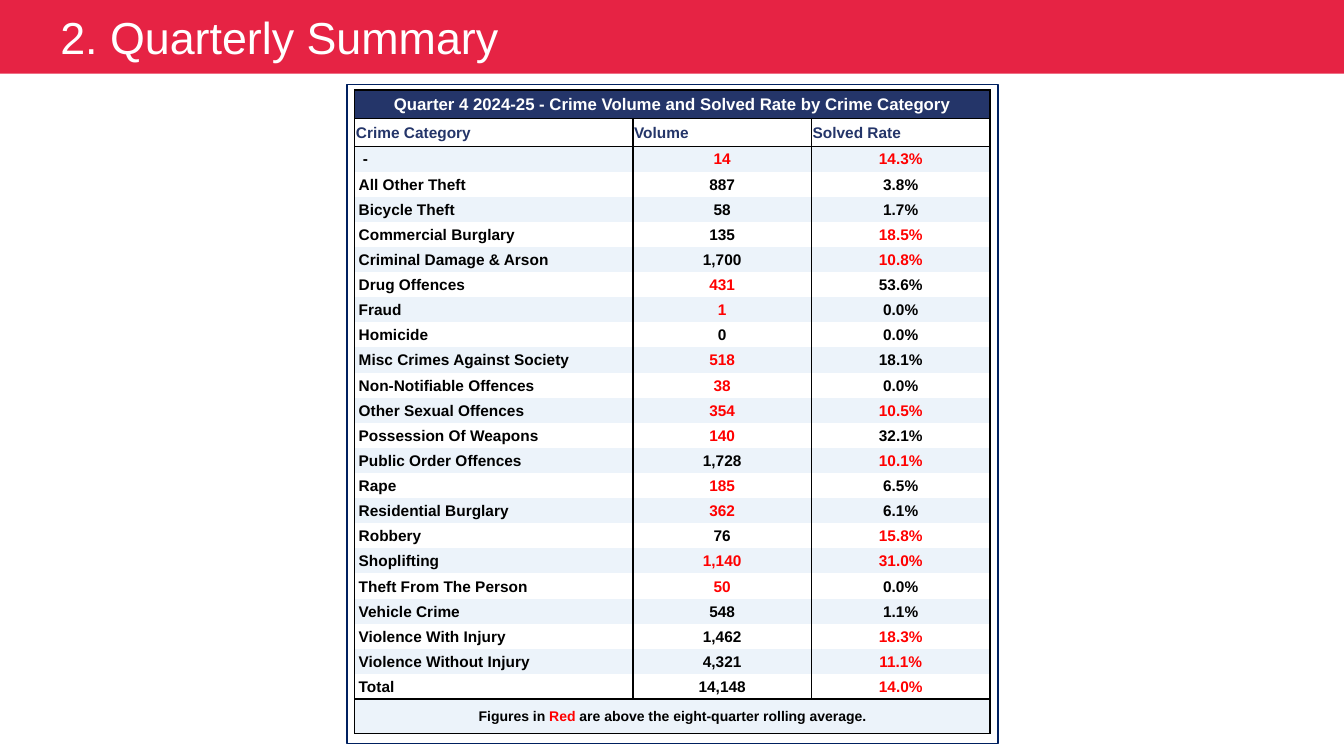
"""Build the quarterly crime summary slide."""
from lxml.etree import SubElement
from pptx import Presentation
from pptx.dml.color import RGBColor
from pptx.enum.shapes import MSO_SHAPE
from pptx.enum.text import MSO_ANCHOR, PP_ALIGN
from pptx.oxml import parse_xml
from pptx.oxml.ns import nsdecls, qn
from pptx.util import Cm, Pt

NAVY, RED, BLACK, WHITE, PALE = "243569", "FF0000", "000000", "FFFFFF", "ECF3FA"
HEADINGS = ["Crime Category", "Volume", "Solved Rate"]
ABOVE_AVERAGE = "*"
CRIMES = [
    (" -", "14*", "14.3%*"),
    ("All Other Theft", "887", "3.8%"),
    ("Bicycle Theft", "58", "1.7%"),
    ("Commercial Burglary", "135", "18.5%*"),
    ("Criminal Damage & Arson", "1,700", "10.8%*"),
    ("Drug Offences", "431*", "53.6%"),
    ("Fraud", "1*", "0.0%"),
    ("Homicide", "0", "0.0%"),
    ("Misc Crimes Against Society", "518*", "18.1%"),
    ("Non-Notifiable Offences", "38*", "0.0%"),
    ("Other Sexual Offences", "354*", "10.5%*"),
    ("Possession Of Weapons", "140*", "32.1%"),
    ("Public Order Offences", "1,728", "10.1%*"),
    ("Rape", "185*", "6.5%"),
    ("Residential Burglary", "362*", "6.1%"),
    ("Robbery", "76", "15.8%*"),
    ("Shoplifting", "1,140*", "31.0%*"),
    ("Theft From The Person", "50*", "0.0%"),
    ("Vehicle Crime", "548", "1.1%"),
    ("Violence With Injury", "1,462", "18.3%*"),
    ("Violence Without Injury", "4,321", "11.1%*"),
    ("Total", "14,148", "14.0%*"),
]


def color(value):
    """Turn a hex string into a colour."""
    return RGBColor.from_string(value)


class SlideBuilder:
    """Hold the style and the current slide."""

    font_name = "Arial"
    border_width = Pt(1)

    def __init__(self, slide):
        """Keep the slide to draw on."""
        self.slide = slide

    def add_text(self, paragraph, runs, size, bold=False, align=PP_ALIGN.LEFT):
        """Add runs of text, each with its own colour."""
        paragraph.alignment = align
        formats = {"name": self.font_name, "size": Pt(size), "bold": bold}
        for text, text_color in runs:
            run = paragraph.add_run()
            run.text = text
            for name, value in formats.items():
                setattr(run.font, name, value)
            run.font.color.rgb = color(text_color)

    def rectangle(self, left, top, width, height, fill=None, line=None):
        """Add a rectangle with an optional fill and outline."""
        shape = self.slide.shapes.add_shape(
            MSO_SHAPE.RECTANGLE, Cm(left), Cm(top), Cm(width), Cm(height))
        shape.shadow.inherit = False
        for target, value in ((shape.fill, fill), (shape.line.fill, line)):
            if value:
                target.solid()
                target.fore_color.rgb = color(value)
            else:
                target.background()
        if line:
            shape.line.width = Pt(1.25)
        return shape

    def banner(self, title):
        """Add the title band across the top."""
        shape = self.rectangle(0, 0, 33.87, 1.86, fill="E62344")
        shape.text_frame.vertical_anchor = MSO_ANCHOR.MIDDLE
        self.add_text(shape.text_frame.paragraphs[0], [("\t" + title, WHITE)], 32)

    def table(self, left, top, column_widths, row_heights):
        """Add an unbanded table with the given column and row sizes."""
        frame = self.slide.shapes.add_table(
            len(row_heights), len(column_widths), Cm(left), Cm(top),
            sum(column_widths), sum(row_heights))
        table = frame.table
        table.first_row = table.horz_banding = False
        for column, width in zip(table.columns, column_widths):
            column.width = width
        for row, height in zip(table.rows, row_heights):
            row.height = height
        return table

    def cell(self, cell, runs, size=11, fill=WHITE, edges="LRTB",
             align=PP_ALIGN.LEFT, indent=0.03):
        """Fill and border one cell and set its text."""
        formats = {"margin_left": Cm(indent), "margin_right": Cm(0.03),
                   "margin_top": Cm(0.03), "margin_bottom": 0,
                   "vertical_anchor": MSO_ANCHOR.MIDDLE}
        for name, value in formats.items():
            setattr(cell, name, value)
        cell.fill.solid()
        cell.fill.fore_color.rgb = color(fill)
        self.borders(cell, edges)
        self.add_text(cell.text_frame.paragraphs[0], runs, size, True, align)

    def borders(self, cell, edges):
        """Draw the named edges and clear the others."""
        properties = cell._tc.get_or_add_tcPr()
        for index, edge in enumerate("LRTB"):
            line = parse_xml(f'<a:ln{edge} {nsdecls("a")} w="{self.border_width}"/>')
            if edge in edges:
                solid = SubElement(line, qn("a:solidFill"))
                SubElement(solid, qn("a:srgbClr"), val=BLACK)
            else:
                SubElement(line, qn("a:noFill"))
            properties.insert(index, line)

    def wide_row(self, table, row, runs, **style):
        """Merge a whole row into one centred cell."""
        last = len(table.columns) - 1
        table.cell(row, 0).merge(table.cell(row, last))
        self.cell(table.cell(row, 0), runs, align=PP_ALIGN.CENTER, **style)
        for column in range(1, last + 1):
            self.cell(table.cell(row, column), [], **style)

    def crime_table(self):
        """Add the table of crime volumes and solved rates."""
        row_heights = ([Cm(0.71)] * 2 + [int(Cm(13.94) / len(CRIMES))] * len(CRIMES)
                       + [Cm(0.86)])
        table = self.table(8.94, 2.27, [Cm(7.01), Cm(4.5), Cm(4.5)], row_heights)
        heading = "Quarter 4 2024-25 - Crime Volume and Solved Rate by Crime Category"
        self.wide_row(table, 0, [(heading, WHITE)], size=12, fill=NAVY)
        for column, text in enumerate(HEADINGS):
            self.cell(table.cell(1, column), [(text, NAVY)])
        for index, crime in enumerate(CRIMES):
            edges = "LR" + "T" * (index == 0) + "B" * (index == len(CRIMES) - 1)
            for column, value in enumerate(crime):
                text = value.rstrip(ABOVE_AVERAGE)
                self.cell(table.cell(index + 2, column),
                          [(text, BLACK if text == value else RED)],
                          fill=WHITE if index % 2 else PALE, edges=edges,
                          align=PP_ALIGN.CENTER if column else PP_ALIGN.LEFT,
                          indent=0.03 if column else 0.1)
        note = [("Figures in ", BLACK), ("Red", RED),
                (" are above the eight-quarter rolling average.", BLACK)]
        self.wide_row(table, len(row_heights) - 1, note, size=10, fill=PALE)


def main():
    """Build and save the presentation."""
    presentation = Presentation()
    presentation.slide_width, presentation.slide_height = Cm(33.87), Cm(19.05)
    builder = SlideBuilder(presentation.slides.add_slide(presentation.slide_layouts[6]))
    builder.rectangle(8.74, 2.13, 16.41, 16.61, line="002060")
    builder.banner("2. Quarterly Summary")
    builder.crime_table()
    presentation.save("out.pptx")


if __name__ == "__main__":
    main()
